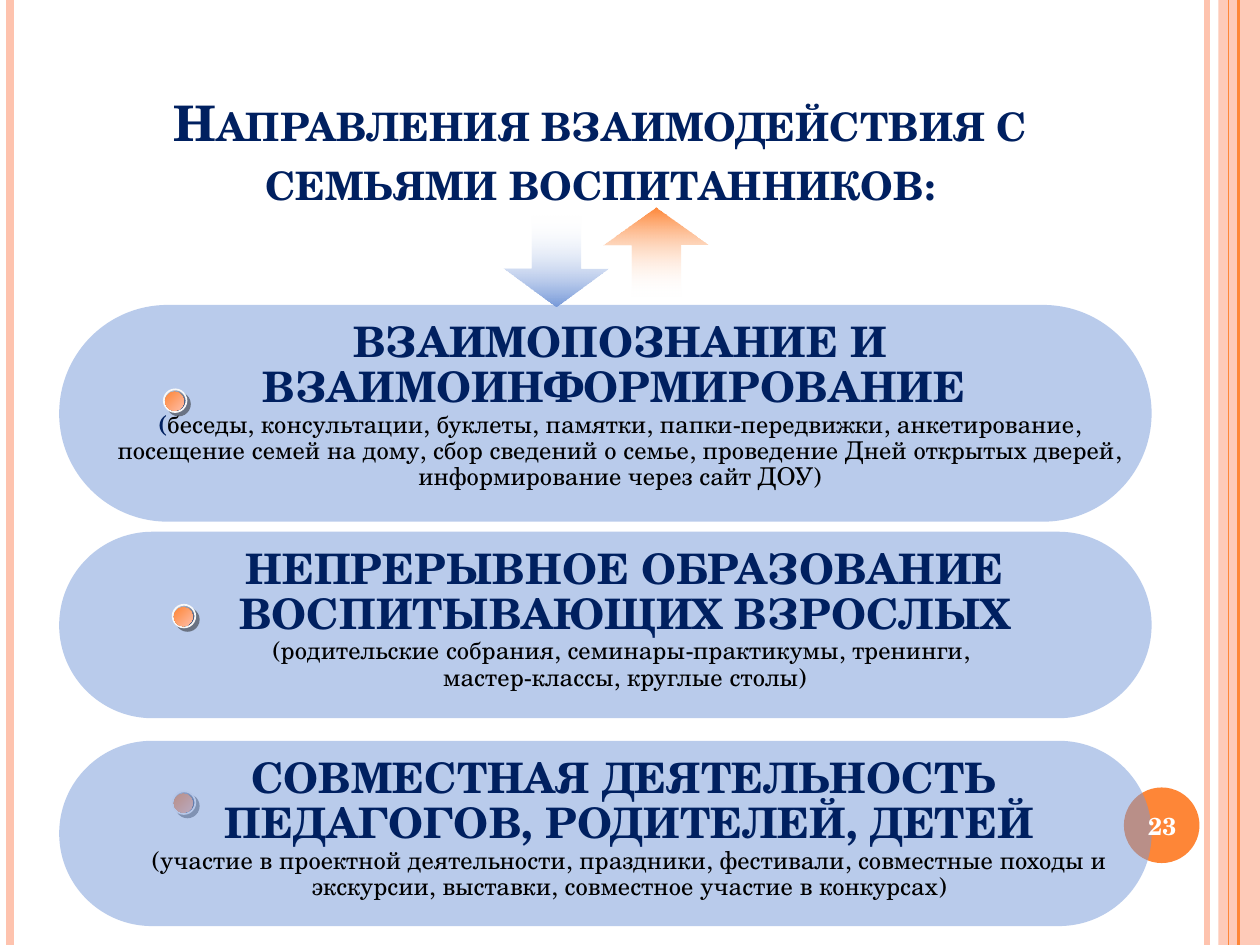
from pptx import Presentation
from pptx.dml.color import RGBColor
from pptx.enum.shapes import MSO_CONNECTOR, MSO_SHAPE
from pptx.enum.text import MSO_ANCHOR, PP_ALIGN
from pptx.oxml.ns import qn
from pptx.util import Inches, Pt
from lxml import etree

LINE = MSO_CONNECTOR.STRAIGHT
RECT, OVAL = MSO_SHAPE.RECTANGLE, MSO_SHAPE.OVAL
PILL = MSO_SHAPE.ROUNDED_RECTANGLE
DOWN, UP = MSO_SHAPE.DOWN_ARROW, MSO_SHAPE.UP_ARROW
CENTER = PP_ALIGN.CENTER
MIDDLE, BOTTOM = MSO_ANCHOR.MIDDLE, MSO_ANCHOR.BOTTOM
FONT = "TeX Gyre Schola"
NAVY, BLACK, WHITE = "002060", "000000", "FFFFFF"
ORANGE, PEACH, BLUE = "FE8637", "FEC3AE", "7598D9"
HEAD = {"size": Pt(24), "bold": True, "color": NAVY}
NOTE = {"size": Pt(14), "bold": False, "color": BLACK}
MARK = {"size": Pt(14), "bold": True, "color": NAVY}

rgb = RGBColor.from_string


def draw(shapes, kind, box, colors, angle=0, alpha=100):
    """Add a borderless shape; two colours give a gradient, alpha is for the first."""
    shape = shapes.add_shape(kind, *map(Inches, box))
    shape.shadow.inherit = False
    shape.line.fill.background()
    if len(colors) == 1:
        shape.fill.solid()
        shape.fill.fore_color.rgb = rgb(colors[0])
    else:
        shape.fill.gradient()
        shape.fill.gradient_angle = angle
        for stop, color in zip(shape.fill.gradient_stops, colors):
            stop.color.rgb = rgb(color)
    if alpha < 100:
        first = next(shape._element.spPr.iter(qn("a:srgbClr")))
        etree.SubElement(first, qn("a:alpha"), val=str(alpha * 1000))
    return shape


def write(frame, paras, space=1.0, anchor=MSO_ANCHOR.TOP):
    """Fill a text frame with paragraphs made of (text, format) runs."""
    frame.word_wrap = True
    frame.vertical_anchor = anchor
    for i, runs in enumerate(paras):
        para = frame.add_paragraph() if i else frame.paragraphs[0]
        para.alignment = CENTER
        para.line_spacing = space
        for text, style in runs:
            run = para.add_run()
            run.text = text
            run.font.name = FONT
            for key, value in style.items():
                if key == "color":
                    run.font.color.rgb = rgb(value)
                else:
                    setattr(run.font, key, value)


deck = Presentation()
deck.slide_width, deck.slide_height = Inches(10), Inches(7.5)
slide = deck.slides.add_slide(deck.slide_layouts[5])
shapes = slide.shapes

# Side stripes
draw(shapes, RECT, (9.67, 0, 0.33, 7.5), [PEACH], alpha=87)
for x, color, width in [(9.58, PEACH, 3), (0.08, PEACH, 4.5),
                        (9.83, ORANGE, 1.5), (9.75, ORANGE, 0.75)]:
    line = shapes.add_connector(LINE, Inches(x), 0, Inches(x), Inches(7.5))
    line.line.color.rgb = rgb(color)
    line.line.width = Pt(width)
    etree.SubElement(line._element.spPr, qn("a:effectLst"))

# Disc behind the page number
draw(shapes, OVAL, (8.92, 6.25, 0.6, 0.6), [ORANGE])

# Title in small capitals
title = shapes.title
title.left, title.top, title.width, title.height = map(
    Inches, (0.86, 0.47, 7.81, 1.25))
write(title.text_frame,
      [[("Направления взаимодействия с семьями воспитанников:",
         {"size": Pt(28), "bold": True, "color": NAVY})]], anchor=BOTTOM)
title.text_frame.paragraphs[0].runs[0].font._element.set("cap", "small")

# Arrows fading out from their heads
for kind, box, color, angle in [(DOWN, (4, 1.71, 0.83, 0.72), BLUE, 270),
                                (UP, (4.79, 1.65, 0.83, 0.7), ORANGE, 90)]:
    arrow = draw(shapes, kind, box, [WHITE, color], angle, alpha=0)
    arrow.adjustments[0], arrow.adjustments[1] = 0.465, 0.421

# Directions: pill top and height, bullet place, text box, paragraphs
parts = [
    (2.42, 1.72, (1.3, 3.09), (0.78, 2.5, 8.28, 1.46), [
        [("ВЗАИМОПОЗНАНИЕ И ВЗАИМОИНФОРМИРОВАНИЕ ", HEAD)],
        [("(", MARK),
         ("беседы, консультации, буклеты, памятки, папки-передвижки, "
          "анкетирование, посещение семей на дому, сбор сведений о семье, "
          "проведение Дней открытых дверей, информирование через сайт ДОУ)",
          NOTE)]]),
    (4.22, 1.48, (1.37, 4.8), (1.33, 4.3, 7.26, 1.25), [
        [("НЕПРЕРЫВНОЕ ОБРАЗОВАНИЕ ВОСПИТЫВАЮЩИХ ВЗРОСЛЫХ", HEAD)],
        [("(родительские собрания, семинары-практикумы, тренинги, ", NOTE)],
        [("мастер-классы, круглые столы)", NOTE)]]),
    (5.88, 1.47, (1.37, 6.28), (1.09, 5.96, 7.81, 1.25), [
        [("СОВМЕСТНАЯ ДЕЯТЕЛЬНОСТЬ ", HEAD)],
        [("ПЕДАГОГОВ, РОДИТЕЛЕЙ, ДЕТЕЙ", HEAD)],
        [("(участие в проектной деятельности, праздники, фестивали, "
          "совместные походы и экскурсии, выставки, совместное участие "
          "в конкурсах)", NOTE)]]),
]
for top, height, (x, y), box, paras in parts:
    # The last bullet lies under its pill, the others on top
    steps = ["bullet", "pill"] if top == parts[-1][0] else ["pill", "bullet"]
    for step in steps:
        if step == "pill":
            pill = draw(shapes, PILL, (0.47, top, 8.67, height), [BLUE], alpha=50)
            pill.adjustments[0] = 0.5
            continue
        group = shapes.add_group_shape().shapes
        ring = draw(group, OVAL, (x, y, 0.18, 0.18), ["DDDDE1", "223864"], 315)
        ring.line.color.rgb = rgb("F8F8F8")
        ring.line.width = Pt(1)
        shade = etree.SubElement(ring._element.spPr.find(qn("a:effectLst")),
                                 qn("a:outerShdw"), dist=str(Pt(2.8)),
                                 dir="2700000", algn="ctr", rotWithShape="0")
        tone = etree.SubElement(shade, qn("a:srgbClr"), val="1C1C1C")
        etree.SubElement(tone, qn("a:alpha"), val="50000")
        draw(group, OVAL, (x + 0.01, y + 0.02, 0.15, 0.15),
             [ORANGE, "FEBEA8"], 315)
    write(shapes.add_textbox(*map(Inches, box)).text_frame, paras, space=0.9)

# Page number
page = shapes.add_textbox(*map(Inches, (8.89, 6.27, 0.67, 0.57)))
write(page.text_frame,
      [[("23", {"size": Pt(14), "bold": True, "color": WHITE})]], anchor=MIDDLE)

deck.save("out.pptx")
